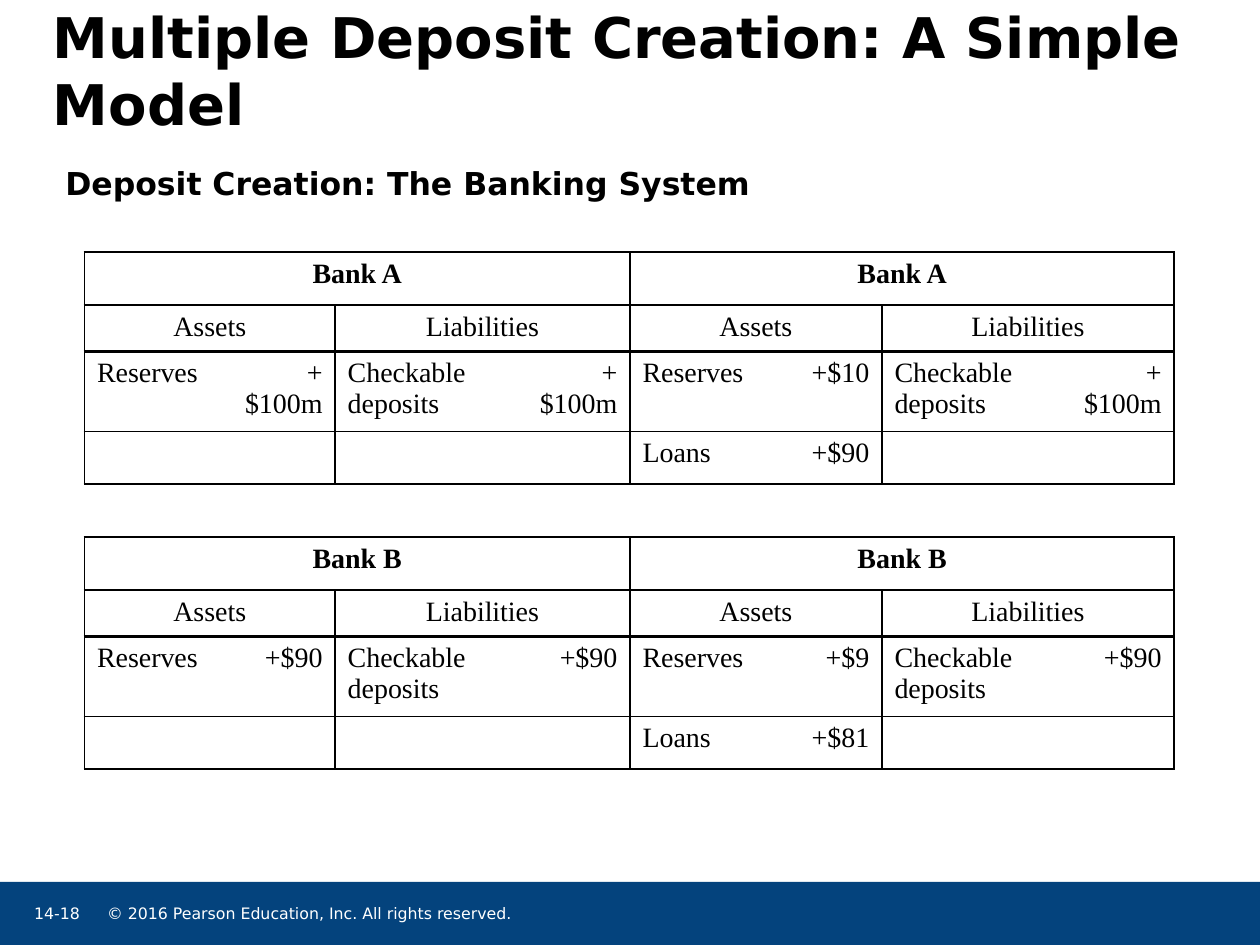
"""Build a slide of T-accounts showing deposit creation in the banking system."""
from lxml.etree import SubElement
from pptx import Presentation
from pptx.dml.color import RGBColor
from pptx.enum.shapes import MSO_SHAPE
from pptx.enum.text import MSO_ANCHOR, PP_ALIGN
from pptx.oxml.ns import qn
from pptx.util import Inches, Pt

SANS, SERIF = "DejaVu Sans", "Times New Roman"
BLACK, WHITE, BLUE = "000000", "FFFFFF", "04437D"
TITLE = "Multiple Deposit Creation: A Simple Model"
SUBTITLE = "Deposit Creation: The Banking System"
COPYRIGHT = "© 2016 Pearson Education, Inc. All rights reserved."
NUMBER = "14-18"
BANKS = [
    ("Bank A", [
        ["Reserves", "+$100m", "Checkable deposits", "+$100m",
         "Reserves", "+$10", "Checkable deposits", "+$100m"],
        ["", "", "", "", "Loans", "+$90", "", ""]]),
    ("Bank B", [
        ["Reserves", "+$90", "Checkable deposits", "+$90",
         "Reserves", "+$9", "Checkable deposits", "+$90"],
        ["", "", "", "", "Loans", "+$81", "", ""]]),
]
SIDES = ["Assets", "Liabilities"]
COLS = [1.16, 0.83, 1.51, 0.83, 1.17, 0.83, 1.42, 0.9]
BANK_ROWS = [0.42, 0.37, 0.63, 0.42]
GAP_ROW = 0.42
THIN, THICK = 1, 1.5


def color(value):
    return RGBColor.from_string(value)


def style(p, font, size, tint=BLACK, bold=False):
    for r in p.runs:
        r.font.name, r.font.size, r.font.bold = font, Pt(size), bold
        r.font.color.rgb = color(tint)


def add_text(s, text, box, size, tint=BLACK, bold=False, inset=0):
    tf = s.shapes.add_textbox(*map(Inches, box)).text_frame
    tf.word_wrap = True
    if not inset:
        tf.margin_left = tf.margin_right = tf.margin_top = tf.margin_bottom = 0
    tf.text = text
    style(tf.paragraphs[0], SANS, size, tint, bold)
    return tf


def set_borders(cell, left, right, top, bottom):
    tc_pr = cell._tc.get_or_add_tcPr()
    for side, width in zip("LRTB", (left, right, top, bottom)):
        ln = SubElement(tc_pr, qn(f"a:ln{side}"), w=str(Pt(width)))
        if width:
            fill = SubElement(ln, qn("a:solidFill"))
            SubElement(fill, qn("a:srgbClr"), val=BLACK)
        else:
            SubElement(ln, qn("a:noFill"))
    cell.fill.background()


def fill_cell(cell, text, align, bold=False):
    p = cell.text_frame.paragraphs[0]
    p.text, p.alignment = text, align
    style(p, SERIF, 16, bold=bold)


def add_bank(table, first, name, entries):
    middle = len(COLS) // 2
    for i in range(len(BANK_ROWS)):
        group = middle if i == 0 else 2
        top = THICK if i == 2 else THIN
        bottom = THICK if i == 1 else THIN
        for c in range(len(COLS)):
            cell = table.cell(first + i, c)
            merged = i < 2
            starts = c % group == 0
            ends = c % group == group - 1
            edge = c + group if merged and starts else c + 1
            left = (THICK if c == middle else THIN) if starts else 0
            right = 0
            if ends or (merged and starts):
                right = THICK if edge == middle else THIN
            set_borders(cell, left, right, top, bottom)
            if merged and starts:
                cell.merge(table.cell(first + i, c + group - 1))
                text = name if i == 0 else SIDES[c // group % 2]
                fill_cell(cell, text, PP_ALIGN.CENTER, bold=i == 0)
            elif not merged:
                align = PP_ALIGN.RIGHT if ends else PP_ALIGN.LEFT
                fill_cell(cell, entries[i - 2][c], align)


def add_accounts(s):
    rows = BANK_ROWS + [GAP_ROW] + BANK_ROWS
    box = map(Inches, (0.67, 2, sum(COLS), sum(rows)))
    table = s.shapes.add_table(len(rows), len(COLS), *box).table
    table.first_row = table.horz_banding = False
    for column, width in zip(table.columns, COLS):
        column.width = Inches(width)
    for row, height in zip(table.rows, rows):
        row.height = Inches(height)
    for c in range(len(COLS)):
        set_borders(table.cell(len(BANK_ROWS), c), 0, 0, THIN, THIN)
    for k, (name, entries) in enumerate(BANKS):
        add_bank(table, k * (len(BANK_ROWS) + 1), name, entries)


def main():
    prs = Presentation()
    prs.slide_width, prs.slide_height = Inches(10), Inches(7.5)
    s = prs.slides.add_slide(prs.slide_layouts[6])
    bar = s.shapes.add_shape(MSO_SHAPE.RECTANGLE, *map(Inches, (0, 7, 10, 0.5)))
    bar.shadow.inherit = False
    bar.fill.solid()
    bar.fill.fore_color.rgb = color(BLUE)
    bar.line.fill.background()
    add_text(s, COPYRIGHT, (0.85, 7.17, 5.9, 0.2), 9, WHITE)
    add_text(s, NUMBER, (0.27, 7.17, 0.39, 0.2), 9, WHITE)
    add_accounts(s)
    title = add_text(s, TITLE, (0.42, 0.01, 9.17, 1.09), 32, bold=True)
    title.vertical_anchor = MSO_ANCHOR.MIDDLE
    add_text(s, SUBTITLE, (0.42, 1.25, 7.58, 0.4), 18, bold=True, inset=0.1)
    prs.save("out.pptx")


if __name__ == "__main__":
    main()
